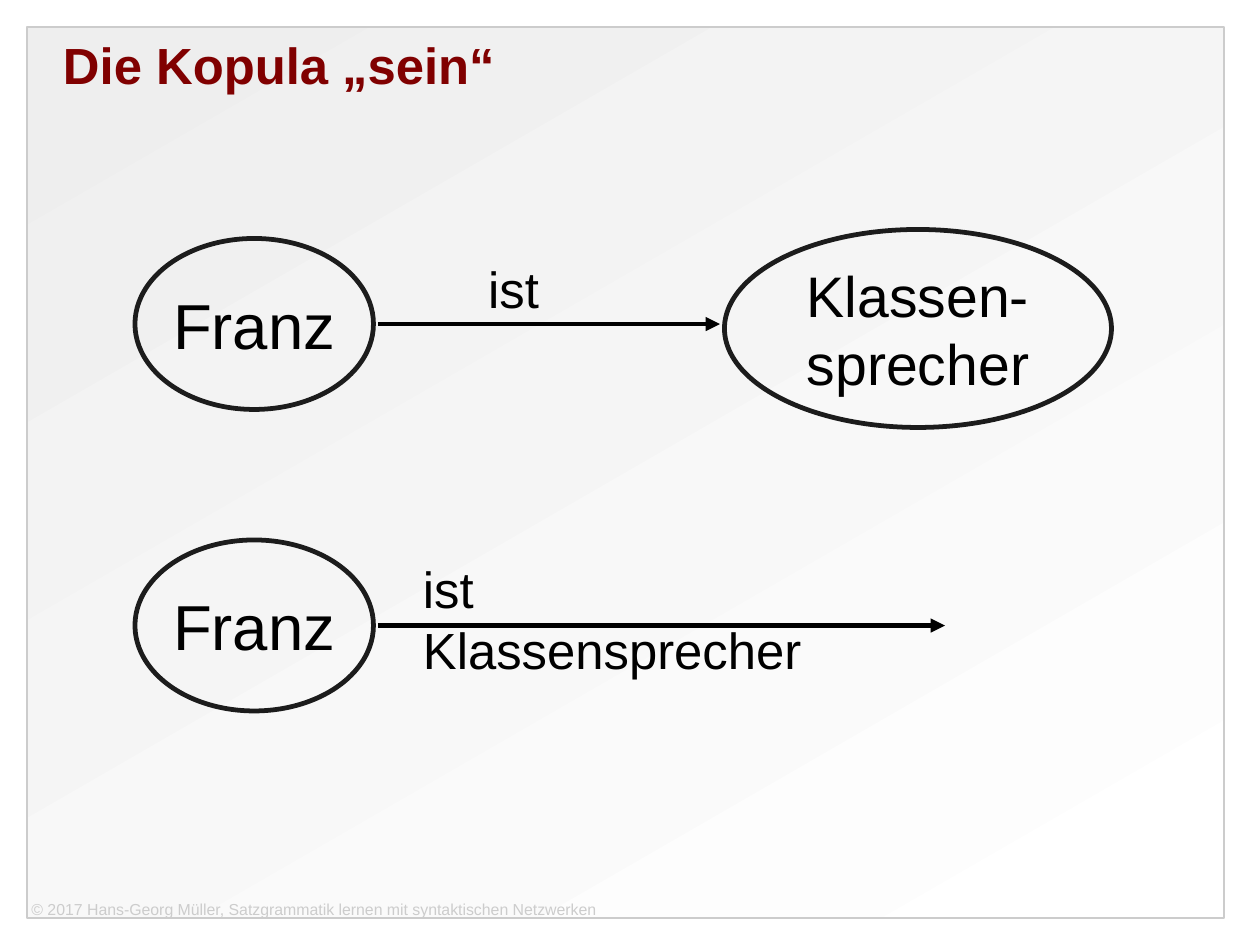
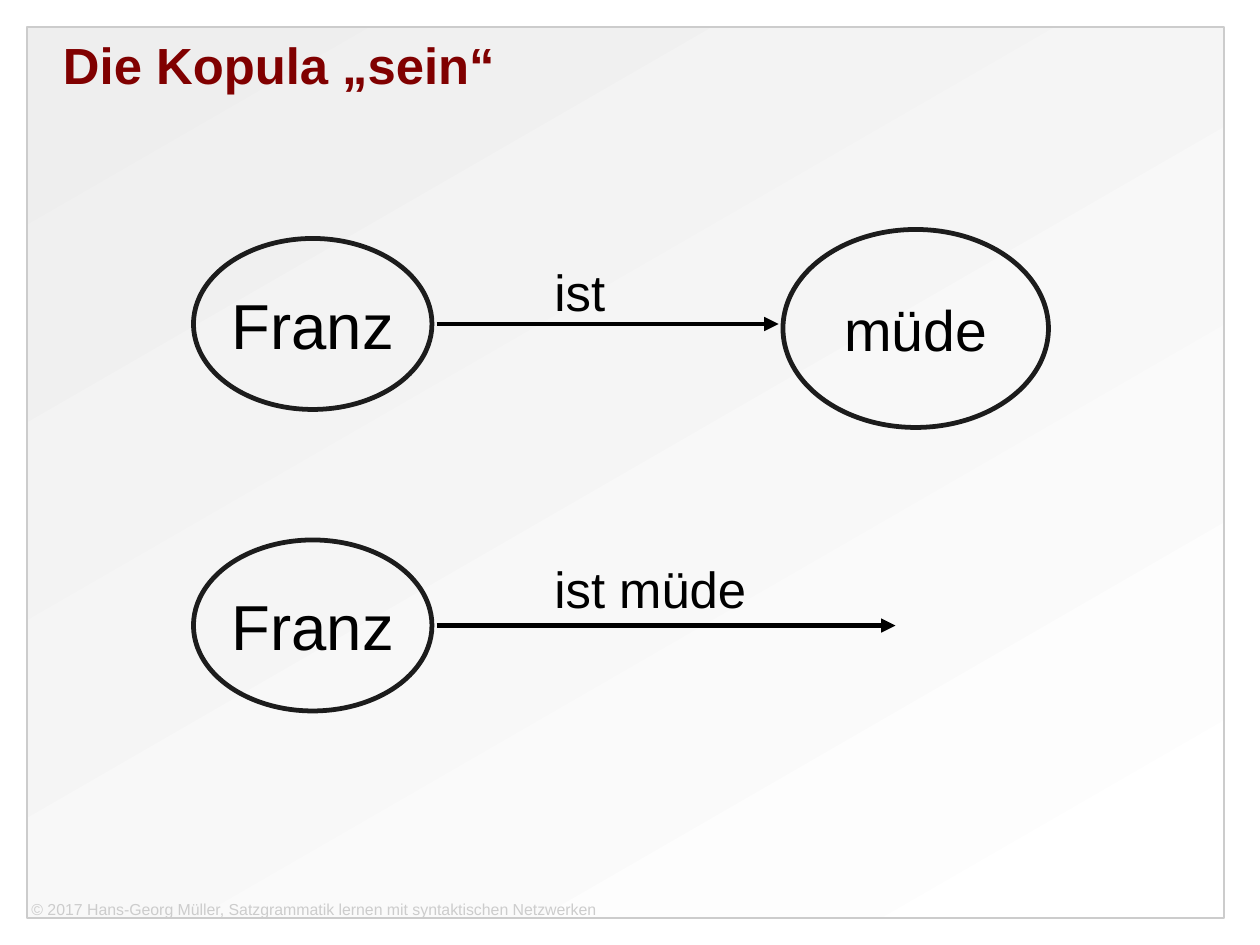
from dataclasses import dataclass

from lxml import etree
from pptx import Presentation
from pptx.dml.color import RGBColor
from pptx.enum.shapes import MSO_CONNECTOR, MSO_SHAPE
from pptx.enum.text import MSO_ANCHOR, PP_ALIGN
from pptx.oxml.ns import qn
from pptx.util import Cm, Pt

LEFT, CENTER = PP_ALIGN.LEFT, PP_ALIGN.CENTER
TOP, MIDDLE = MSO_ANCHOR.TOP, MSO_ANCHOR.MIDDLE
OVAL, RECT = MSO_SHAPE.OVAL, MSO_SHAPE.RECTANGLE
STRAIGHT = MSO_CONNECTOR.STRAIGHT
TITLE_ONLY = 5


@dataclass(frozen=True)
class Theme:
    font: str = "Arial"
    text: str = "000000"
    title: str = "800000"
    outline: str = "1C1C1C"
    pale: str = "CCCCCC"
    shade: tuple = ("EEEEEE", "FFFFFF")
    subject_size: int = 40
    predicate_size: int = 36
    label_size: int = 32
    footer_size: int = 10
    stroke: float = 3
    frame_stroke: float = 1.5


T = Theme()
COLS, ROWS = 28, 21

prs = Presentation()
prs.slide_width, prs.slide_height = Cm(COLS), Cm(ROWS)
cell = prs.slide_width / COLS


def grid(*cells):
    """Turn columns and rows of the grid into slide lengths."""
    return [round(c * cell) for c in cells]


def write(shape, text, size, color=T.text, bold=False, align=LEFT,
          anchor=TOP, wrap=True, insets=(0.25, 0.13, 0.25, 0.13)):
    tf = shape.text_frame
    tf.word_wrap, tf.vertical_anchor = wrap, anchor
    (tf.margin_left, tf.margin_top,
     tf.margin_right, tf.margin_bottom) = grid(*insets)
    p = tf.paragraphs[0]
    p.text, p.alignment = text, align
    for r in p.runs:
        r.font.name, r.font.size, r.font.bold = T.font, Pt(size), bold
        r.font.color.rgb = RGBColor.from_string(color)


# Each slide: left edge of the subject, predicate (text, width),
# end of the lower arrow, labels (text, left, top, width)
slides = [
    (3, ("Klassen-\vsprecher", 8.6), 21,
     [("ist", 10.6, 5.6, 1.95), ("ist Klassensprecher", 9.15, 12.27, 10.2)]),
    (4.3, ("müde", 5.9), 19.9,
     [("ist", 12.07, 5.67, 1.95), ("ist müde", 12.07, 12.27, 5.4)]),
]
SUBJECT_W, SUBJECT_H, GAP = 5.3, 3.8, 0.1
ARROW_ROWS = (7.2, 13.9)
ARROW_LENGTH = 7.6

for subject_left, (predicate, predicate_w), lower_end, labels in slides:
    s = prs.slides.add_slide(prs.slide_layouts[TITLE_ONLY])
    title = s.shapes.title
    title.left, title.top, title.width, title.height = grid(1.4, 0.74, 25.2, 2.54)
    write(title, "Die Kopula „sein“", T.label_size, T.title, bold=True,
          insets=(0, 0, 0, 0))

    arrow_start = subject_left + SUBJECT_W + GAP
    upper_end = arrow_start + ARROW_LENGTH
    for y, end in zip(ARROW_ROWS, (upper_end, lower_end)):
        arrow = s.shapes.add_connector(STRAIGHT, *grid(arrow_start, y, end, y))
        arrow.line.width = Pt(T.stroke)
        arrow.line.color.rgb = RGBColor.from_string(T.text)
        etree.SubElement(arrow.line._get_or_add_ln(), qn("a:tailEnd"), type="triangle")
        etree.SubElement(arrow.element.spPr, qn("a:effectLst"))

    nodes = [("Franz", T.subject_size, subject_left, y - SUBJECT_H / 2, SUBJECT_W, SUBJECT_H)
             for y in ARROW_ROWS]
    nodes.append((predicate, T.predicate_size, upper_end + GAP, 5.1, predicate_w, 4.4))
    for text, size, *box in nodes:
        node = s.shapes.add_shape(OVAL, *grid(*box))
        node.shadow.inherit = False
        node.fill.background()
        node.line.width = Pt(T.stroke)
        node.line.color.rgb = RGBColor.from_string(T.outline)
        write(node, text, size, align=CENTER, anchor=MIDDLE, wrap=False,
              insets=(0.3, 0.18, 0.3, 0.18))

    for text, left, top, width in labels:
        write(s.shapes.add_textbox(*grid(left, top, width, 1.63)), text, T.label_size)

# Frame and footer are built once and moved to the slide master
frame = s.shapes.add_shape(RECT, *grid(0.6, 0.6, 26.6, 19.8))
frame.shadow.inherit = False
frame.fill.gradient()
frame.fill.gradient_angle = 300
for stop, color in zip(frame.fill.gradient_stops, T.shade):
    stop.color.rgb = RGBColor.from_string(color)
frame.line.width = Pt(T.frame_stroke)
frame.line.color.rgb = RGBColor.from_string(T.pale)

footer = s.shapes.add_textbox(*grid(0.6, 20, 26.6, 0.4))
write(footer, "© 2017 Hans-Georg Müller, Satzgrammatik lernen mit syntaktischen Netzwerken",
      T.footer_size, T.pale, insets=(0.1, 0, 0, 0))

master_tree = prs.slide_master.shapes.element
for position, shape in enumerate((frame, footer), start=2):
    master_tree.insert(position, shape.element)

prs.save("out.pptx")
